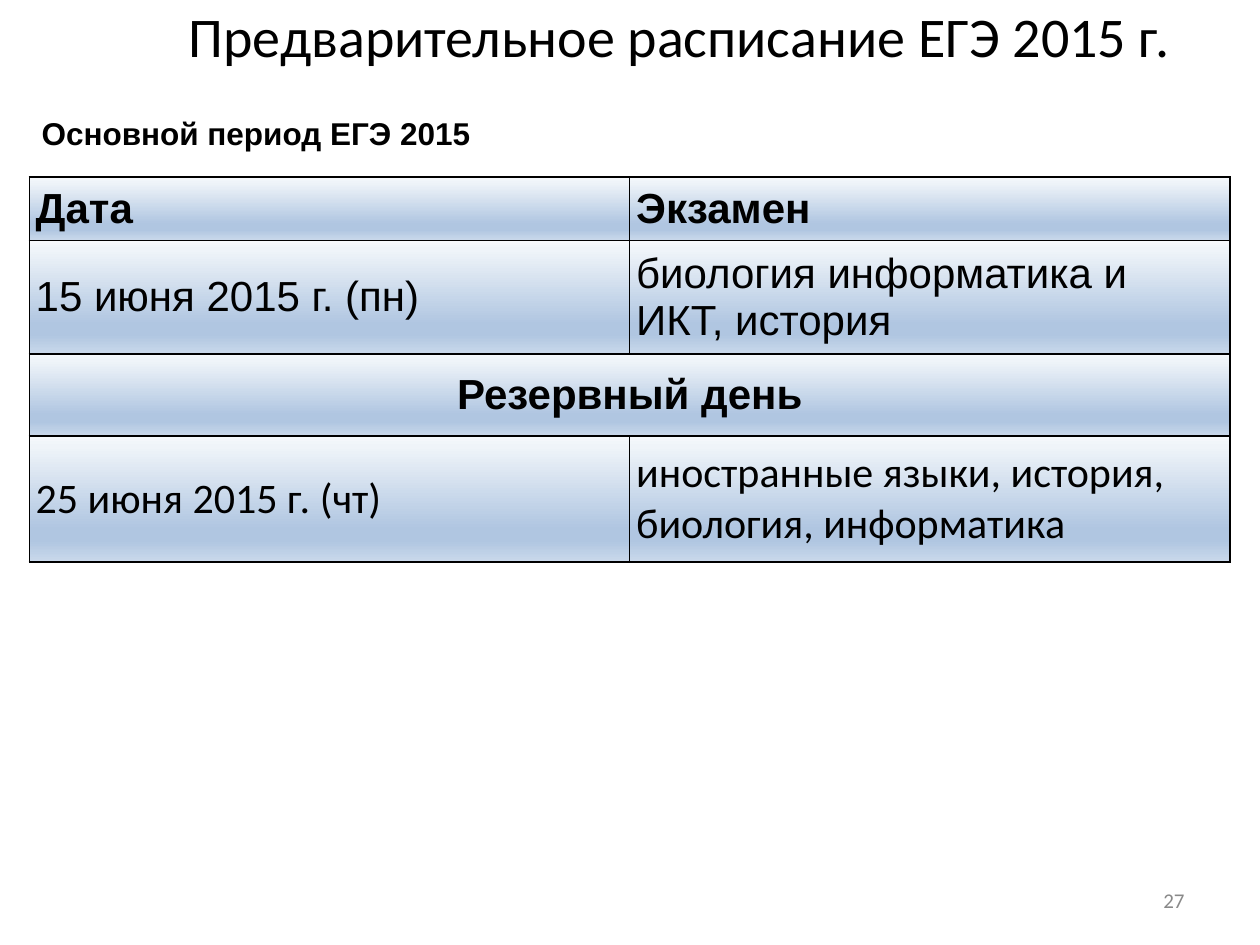
from lxml import etree
from pptx import Presentation
from pptx.dml.color import RGBColor
from pptx.enum.text import MSO_ANCHOR, PP_ALIGN
from pptx.oxml.ns import qn
from pptx.util import Cm, Pt

LEFT, CENTER, RIGHT = PP_ALIGN.LEFT, PP_ALIGN.CENTER, PP_ALIGN.RIGHT
TOP, MIDDLE = MSO_ANCHOR.TOP, MSO_ANCHOR.MIDDLE

# Content
TITLE = "Предварительное расписание ЕГЭ 2015 г."
SUBTITLE = "Основной период ЕГЭ 2015"
PAGE_NUMBER = "27"
# Row height in cm, font, bold, cell texts (a single text spans the row)
ROWS = [
    (1.27, "Arial", True, ["Дата", "Экзамен"]),
    (2.29, "Arial", False, ["15 июня 2015 г. (пн)", "биология информатика и ИКТ, история"]),
    (1.65, "Arial", True, ["Резервный день"]),
    (2.54, "Calibri", False, ["25 июня 2015 г. (чт)",
                              "иностранные языки, история, биология, информатика"]),
]
GRADIENT = [(0, "F6F9FC"), (8, "EFF4F9"), (74, "B0C6E1"), (83, "B0C6E1"), (100, "CAD9EB")]
BLACK, GREY = "000000", "898989"
TABLE_LEFT, TABLE_TOP, TABLE_WIDTH = 0.59, 3.57, 24.21
COLUMNS = 2


def style_text(text_frame, text, font, size, color=BLACK, bold=False, align=LEFT):
    text_frame.text = text
    text_frame.word_wrap = True
    paragraph = text_frame.paragraphs[0]
    paragraph.alignment = align
    run_font = paragraph.runs[0].font
    run_font.name, run_font.size, run_font.bold = font, Pt(size), bold
    run_font.color.rgb = RGBColor.from_string(color)


def add_color(parent, color):
    etree.SubElement(parent, qn("a:srgbClr"), val=color)


def style_cell(cell):
    cell.vertical_anchor = MIDDLE
    cell.margin_left = cell.margin_right = cell.margin_top = cell.margin_bottom = Cm(0.13)
    properties = cell._tc.get_or_add_tcPr()
    for side in ("a:lnL", "a:lnR", "a:lnT", "a:lnB"):
        line = etree.SubElement(properties, qn(side), w=str(Pt(1)))
        add_color(etree.SubElement(line, qn("a:solidFill")), BLACK)
    fill = etree.SubElement(properties, qn("a:gradFill"), rotWithShape="1")
    stops = etree.SubElement(fill, qn("a:gsLst"))
    for position, color in GRADIENT:
        add_color(etree.SubElement(stops, qn("a:gs"), pos=str(position * 1000)), color)
    etree.SubElement(fill, qn("a:lin"), ang=str(90 * 60000), scaled="0")


def add_text(slide, box, anchor, *args, **options):
    shape = slide.shapes.add_textbox(*map(Cm, box))
    shape.text_frame.vertical_anchor = anchor
    style_text(shape.text_frame, *args, **options)


def add_schedule(slide):
    height = sum(row[0] for row in ROWS)
    table = slide.shapes.add_table(len(ROWS), COLUMNS, Cm(TABLE_LEFT), Cm(TABLE_TOP),
                                   Cm(TABLE_WIDTH), Cm(height)).table
    table.horz_banding = False
    for row_index, (row_height, font, bold, texts) in enumerate(ROWS):
        table.rows[row_index].height = Cm(row_height)
        cells = [table.cell(row_index, column) for column in range(COLUMNS)]
        for cell in cells:
            style_cell(cell)
        spans = len(texts) == 1
        if spans:
            cells[0].merge(cells[-1])
        for cell, text in zip(cells, texts):
            style_text(cell.text_frame, text, font, 24, bold=bold,
                       align=CENTER if spans else LEFT)


def main():
    presentation = Presentation()
    presentation.slide_width, presentation.slide_height = Cm(25.4), Cm(19.05)
    slide = presentation.slides.add_slide(presentation.slide_layouts[5])

    # Title
    title = slide.shapes.title
    title.left, title.top, title.width, title.height = map(Cm, (2.6, 0, 22.22, 1.4))
    title.text_frame.vertical_anchor = MIDDLE
    style_text(title.text_frame, TITLE, "Calibri", 32, align=CENTER)

    # Page number, subtitle and schedule
    add_text(slide, (18.2, 17.65, 5.93, 1.01), MIDDLE, PAGE_NUMBER, "Calibri", 12, GREY,
             align=RIGHT)
    add_text(slide, (0.59, 2.18, 24.41, 2.39), TOP, SUBTITLE, "Arial", 18, bold=True)
    add_schedule(slide)
    presentation.save("out.pptx")


if __name__ == "__main__":
    main()
